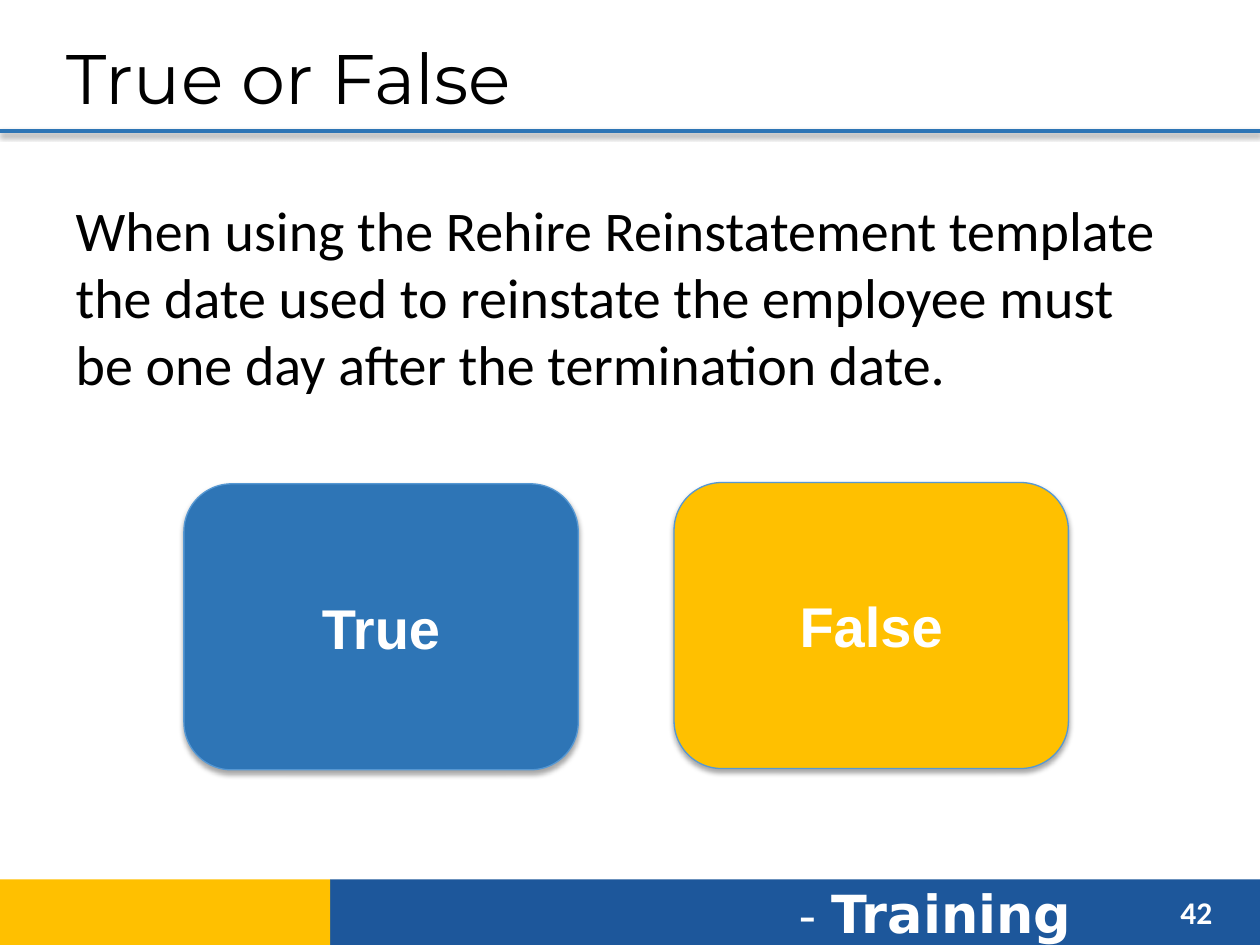
from lxml.etree import SubElement
from pptx import Presentation
from pptx.dml.color import RGBColor
from pptx.enum.shapes import MSO_CONNECTOR, MSO_SHAPE
from pptx.enum.text import MSO_ANCHOR, MSO_AUTO_SIZE, PP_ALIGN
from pptx.oxml.ns import qn
from pptx.util import Inches, Pt

WHITE = RGBColor(0xFF, 0xFF, 0xFF)
BLACK = RGBColor(0, 0, 0)
NAVY = RGBColor(0x1D, 0x57, 0x9B)
GOLD = RGBColor(0xFF, 0xC0, 0x00)
BLUE = RGBColor(0x2E, 0x75, 0xB6)
RULE_BLUE = RGBColor(0x2E, 0x75, 0xB5)
EDGE_BLUE = RGBColor(0x56, 0x98, 0xD3)

HEADING = "True or False"
QUESTION = ("When using the Rehire Reinstatement template the date used to reinstate "
            "the employee must be one day after the termination date.")
ANSWERS = [("True", BLUE, 3.84), ("False", GOLD, 3.83)]
FOOTER = [("- ", 28, False), ("Training", 30, True)]
PAGE_NUMBER = "42"

WIDTH, HEIGHT = 10, 7.5
RULE_TOP = 1.04
FOOTER_TOP = 6.98
FOOTER_SPLIT = 2.62
ANSWER_LEFT, ANSWER_PITCH = 1.46, 3.89
ANSWER_WIDTH, ANSWER_HEIGHT = 3.13, 2.27

deck = Presentation()
deck.slide_width, deck.slide_height = Inches(WIDTH), Inches(HEIGHT)
slide = deck.slides.add_slide(deck.slide_layouts[1])


def write(paragraph, text, *, size, font, color, bold=False, align=PP_ALIGN.LEFT):
    paragraph.alignment = align
    run = paragraph.add_run()
    run.text = text
    run.font.size, run.font.name, run.font.bold = Pt(size), font, bold
    run.font.color.rgb = color


def place(part, left, top, width, height):
    part.left, part.top = Inches(left), Inches(top)
    part.width, part.height = Inches(width), Inches(height)


def add_block(kind, left, top, width, height, fill):
    block = slide.shapes.add_shape(
        kind, Inches(left), Inches(top), Inches(width), Inches(height))
    block.shadow.inherit = False
    block.fill.solid()
    block.fill.fore_color.rgb = fill
    block.line.fill.background()
    return block


def add_text_area(left, top, width, height):
    area = slide.shapes.add_textbox(
        Inches(left), Inches(top), Inches(width), Inches(height))
    area.text_frame.word_wrap = True
    return area.text_frame.paragraphs[0]


def cast_shadow(part, distance, opacity):
    properties = part._element.spPr
    effects = properties.find(qn("a:effectLst"))
    if effects is None:
        effects = SubElement(properties, qn("a:effectLst"))
    shadow = SubElement(effects, qn("a:outerShdw"), blurRad=str(Pt(3.1)),
                        dist=str(Pt(distance)), dir="5400000", rotWithShape="0")
    shade = SubElement(shadow, qn("a:srgbClr"), val=str(BLACK))
    SubElement(shade, qn("a:alpha"), val=str(opacity * 1000))


add_block(MSO_SHAPE.RECTANGLE, FOOTER_SPLIT, FOOTER_TOP,
          WIDTH - FOOTER_SPLIT, HEIGHT - FOOTER_TOP, NAVY)
footer = add_text_area(6.24, 6.94, 2.8, 0.61)
for words, size, bold in FOOTER:
    write(footer, words, size=size, font="DejaVu Sans", color=WHITE, bold=bold)

rule = slide.shapes.add_connector(
    MSO_CONNECTOR.STRAIGHT, 0, Inches(RULE_TOP), Inches(WIDTH), Inches(RULE_TOP))
rule.line.color.rgb = RULE_BLUE
rule.line.width = Pt(2.25)
cast_shadow(rule, 1.6, 38)

write(add_text_area(9.27, 7.04, 0.6, 0.4), PAGE_NUMBER,
      size=18, font="Calibri", color=WHITE, bold=True)
add_block(MSO_SHAPE.RECTANGLE, 0, FOOTER_TOP,
          FOOTER_SPLIT, HEIGHT - FOOTER_TOP, GOLD)

title, body = slide.placeholders
place(title, 0.43, 0.14, 9.57, 0.93)
place(body, 0.5, 1.5, 9, 3.25)
for holder in (title, body):
    holder.text_frame.auto_size = MSO_AUTO_SIZE.NONE
title.text_frame.vertical_anchor = MSO_ANCHOR.MIDDLE
write(title.text_frame.paragraphs[0], HEADING, size=40, font="Montserrat", color=BLACK)

question = body.text_frame.paragraphs[0]
layout = question._p.get_or_add_pPr()
layout.set("marL", "0")
layout.set("indent", "0")
SubElement(layout, qn("a:buNone"))
question.space_before = Pt(0)
write(question, QUESTION, size=32, font="Calibri", color=BLACK)

for column, (answer, fill, top) in enumerate(ANSWERS):
    button = add_block(MSO_SHAPE.ROUNDED_RECTANGLE, ANSWER_LEFT + column * ANSWER_PITCH,
                       top, ANSWER_WIDTH, ANSWER_HEIGHT, fill)
    button.line.color.rgb = EDGE_BLUE
    button.line.width = Pt(0.75)
    cast_shadow(button, 1.8, 35)
    button.text_frame.vertical_anchor = MSO_ANCHOR.MIDDLE
    write(button.text_frame.paragraphs[0], answer, size=32, font="Arial",
          color=WHITE, bold=True, align=PP_ALIGN.CENTER)

deck.save("out.pptx")
